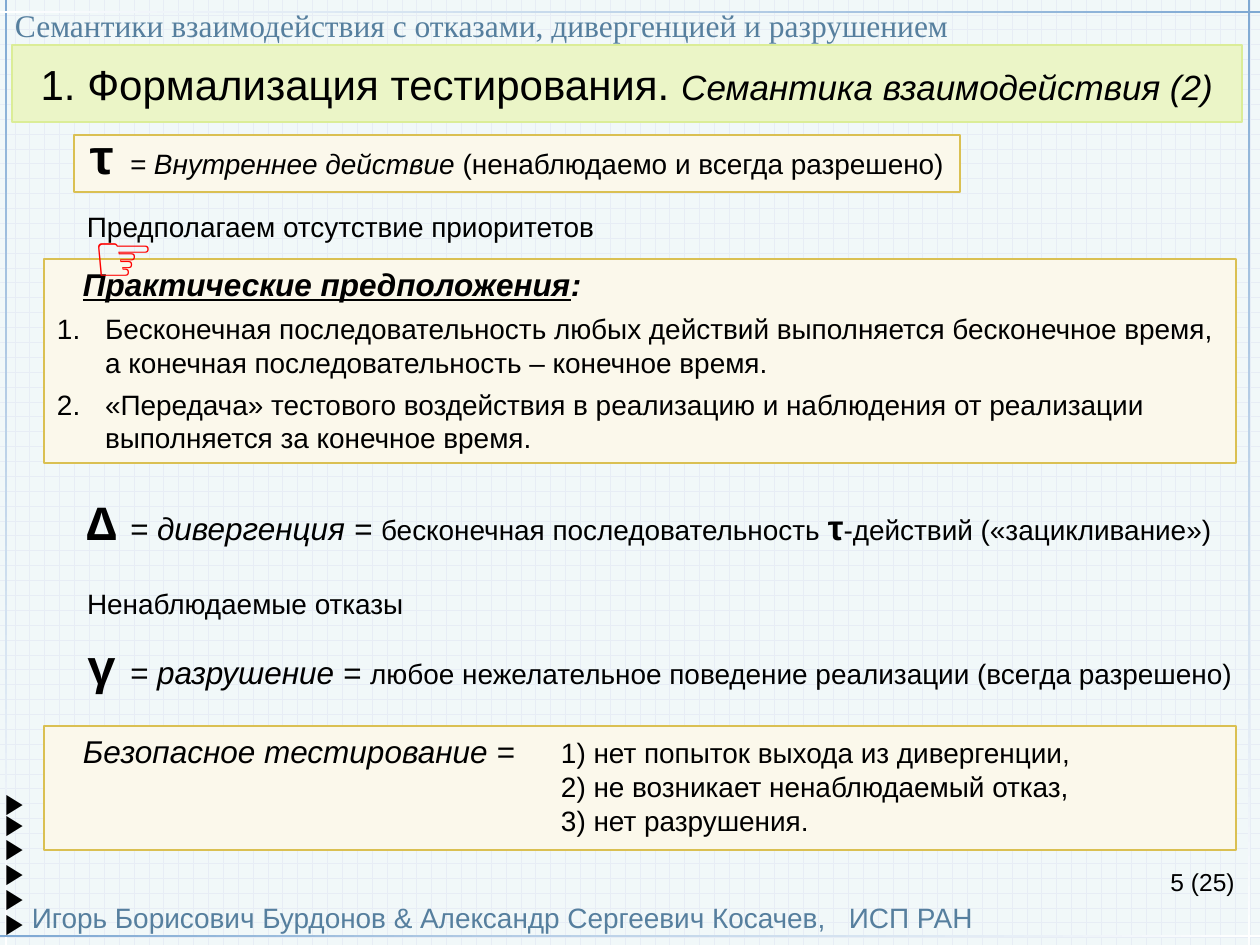
import pptx
import pptx.dml.color
import pptx.enum.dml
import pptx.enum.shapes
import pptx.enum.text
import pptx.oxml.ns
import pptx.util
from lxml import etree

SCALE = 914400 / 126
ALIGN = pptx.enum.text.PP_ALIGN
ANCHOR = pptx.enum.text.MSO_ANCHOR
AUTO_SIZE = pptx.enum.text.MSO_AUTO_SIZE

BLACK = "000000"
STEEL = "567F9E"
LINE_BLUE = "7FA9D3"
WHITE = "FFFFFF"
CREAM = "FBF8EB"
GOLD = "DAC052"

BODY = {"name": "Arial", "size": 16}
BODY_ITALIC = {**BODY, "italic": True}
TERM = {"name": "Arial", "size": 18, "italic": True}
HEADING = {**TERM, "bold": True}
SYMBOL = {"name": "Courier New", "size": 28, "bold": True}
SYMBOL_GAP = {**SYMBOL, "name": "Arial"}
MARKER = {"name": "Times New Roman", "size": 16, "bold": True}
PAGE = {"name": "Arial", "size": 14}


def px(value):
    return round(value * SCALE)


def rgb(value):
    return pptx.dml.color.RGBColor.from_string(value)


def set_values(target, values):
    for name, value in values.items():
        setattr(target, name, value)


def add_runs(paragraph, runs, color):
    for text, style in runs:
        for index, line in enumerate(text.split("\n")):
            if index:
                paragraph.add_line_break()
            run = paragraph.add_run()
            run.text = line
            set_values(run.font, {**style, "size": pptx.util.Pt(style["size"])})
            run.font.color.rgb = rgb(color)


def symbol_runs(symbol):
    return [(symbol, SYMBOL), (" ", SYMBOL_GAP)]


def set_indent(paragraph, margin, first_line):
    properties = paragraph._p.get_or_add_pPr()
    properties.set("marL", str(px(margin)))
    properties.set("indent", str(px(first_line)))


def set_number(paragraph):
    number = etree.SubElement(paragraph._p.get_or_add_pPr(), pptx.oxml.ns.qn("a:buAutoNum"))
    number.set("type", "arabicPeriod")


def set_tab(paragraph, position):
    tabs = etree.SubElement(paragraph._p.get_or_add_pPr(), pptx.oxml.ns.qn("a:tabLst"))
    tab = etree.SubElement(tabs, pptx.oxml.ns.qn("a:tab"))
    tab.set("pos", str(px(position)))
    tab.set("algn", "l")


def set_frame(shape, insets=(13, 6), **values):
    across, down = (px(inset) for inset in insets)
    set_values(shape.text_frame, {
        "margin_left": across, "margin_right": across,
        "margin_top": down, "margin_bottom": down, **values})
    return shape.text_frame.paragraphs[0]


def add_label(slide, box, runs, color=BLACK, align=ALIGN.LEFT, wrap=False, **frame):
    shape = slide.shapes.add_textbox(*map(px, box))
    paragraph = set_frame(shape, word_wrap=wrap, **frame)
    paragraph.alignment = align
    add_runs(paragraph, runs, color)
    return paragraph


def add_rectangle(slide, box):
    shape = slide.shapes.add_shape(pptx.enum.shapes.MSO_SHAPE.RECTANGLE, *map(px, box))
    shape.shadow.inherit = False
    return shape


def add_panel(slide, box, fill=CREAM, line=GOLD, align=ALIGN.LEFT, **frame):
    shape = add_rectangle(slide, box)
    shape.fill.solid()
    shape.fill.fore_color.rgb = rgb(fill)
    shape.line.color.rgb = rgb(line)
    shape.line.width = pptx.util.Pt(0.75)
    paragraph = set_frame(shape, **{"word_wrap": True, "vertical_anchor": ANCHOR.TOP, **frame})
    paragraph.alignment = align
    return shape.text_frame


def add_border(slide, box, colors, angle):
    shape = add_rectangle(slide, box)
    shape.line.fill.background()
    shape.fill.gradient()
    shape.fill.gradient_angle = angle
    for stop, color, position in zip(shape.fill.gradient_stops, colors, (0, 1)):
        stop.color.rgb = rgb(color)
        stop.position = position


def add_background(slide):
    fill = slide.background.fill
    fill.patterned()
    fill.pattern = pptx.enum.dml.MSO_PATTERN.HORIZONTAL_BRICK
    fill.fore_color.rgb = rgb("E7EDF5")
    fill.back_color.rgb = rgb("F1F8F9")
    fade = (LINE_BLUE, WHITE)
    for left in (5, 1248):
        add_border(slide, (left, 0, 2, 945), fade, 270)
    add_border(slide, (0, 11, 1260, 2), fade[::-1], 0)
    add_border(slide, (0, 935, 1260, 2), fade, 0)


def add_header_and_footer(slide):
    add_label(slide, (15, 6, 1226, 38),
              [("Семантики взаимодействия с отказами, дивергенцией и разрушением",
                {"name": "Times New Roman", "size": 18})],
              color=STEEL, wrap=True, insets=(0, 0))
    footer = add_label(
        slide, (32, 900, 945, 34),
        [("Игорь Борисович Бурдонов & Александр Сергеевич Косачев,\tИСП РАН", BODY)],
        color=STEEL, wrap=True, insets=(0, 0), vertical_anchor=ANCHOR.BOTTOM)
    set_tab(footer, 817)
    add_label(slide, (903, 861, 294, 66), [("5", PAGE)], align=ALIGN.RIGHT, wrap=True)
    add_label(slide, (1191, 867, 44, 30), [("(25)", PAGE)], insets=(0, 0))
    for top in (786, 807, 831, 856, 881, 906):
        add_label(slide, (5, top, 15, 34), [("▶", MARKER)], insets=(0, 0))


def add_title(slide):
    title = add_panel(slide, (12, 45, 1230, 77), "EBF5C7", "DBED97", ALIGN.CENTER,
                      insets=(0, 13), vertical_anchor=ANCHOR.MIDDLE)
    add_runs(title.paragraphs[0], [
        ("1. Формализация тестирования. ", {"name": "Arial", "size": 24}),
        ("Семантика взаимодействия (2)", {"name": "Arial", "size": 20, "italic": True})], BLACK)


def add_assumptions(slide):
    frame = add_panel(slide, (44, 259, 1192, 204))
    heading = frame.paragraphs[0]
    set_indent(heading, 26, 0)
    add_runs(heading, [("Практические предположения", {**HEADING, "underline": True}),
                       (":", HEADING)], BLACK)
    for text in (
            "Бесконечная последовательность любых действий выполняется бесконечное время,\n"
            "а конечная последовательность – конечное время.",
            "«Передача» тестового воздействия в реализацию и наблюдения от реализации\n"
            "выполняется за конечное время."):
        paragraph = frame.add_paragraph()
        paragraph.alignment = ALIGN.LEFT
        paragraph.space_before = pptx.util.Pt(5)
        set_indent(paragraph, 48, -48)
        set_number(paragraph)
        add_runs(paragraph, [(text, BODY)], BLACK)


def add_definitions(slide):
    tau = add_panel(slide, (74, 135, 886, 57), word_wrap=False).paragraphs[0]
    tau.line_spacing = pptx.util.Pt(25)
    add_runs(tau, symbol_runs("τ") + [
        ("= Внутреннее действие", BODY_ITALIC),
        (" (ненаблюдаемо и всегда разрешено)", BODY)], BLACK)
    for box, runs in (
            ((74, 204, 539, 47), [("Предполагаем отсутствие приоритетов", BODY)]),
            ((74, 485, 1158, 72), symbol_runs("Δ") + [
                ("= дивергенция = ", TERM),
                ("бесконечная последовательность ", BODY),
                ("τ", {"name": "Arial", "size": 20, "bold": True}),
                ("-действий («зацикливание»)", BODY)]),
            ((74, 581, 345, 47), [("Ненаблюдаемые отказы", BODY)]),
            ((74, 629, 1172, 72), symbol_runs("γ") + [
                ("= разрушение = ", TERM),
                ("любое нежелательное поведение реализации (всегда разрешено)", BODY)])):
        add_label(slide, box, runs, auto_size=AUTO_SIZE.SHAPE_TO_FIT_TEXT)


def add_safe_testing(slide):
    paragraph = add_panel(slide, (44, 726, 1192, 124)).paragraphs[0]
    set_indent(paragraph, 504, -478)
    add_runs(paragraph, [
        ("Безопасное тестирование =\t", TERM),
        ("1) нет попыток выхода из дивергенции,\n"
         "2) не возникает ненаблюдаемый отказ,\n"
         "3) нет разрушения.", BODY)], BLACK)


def main():
    presentation = pptx.Presentation()
    set_values(presentation, {"slide_width": px(1260), "slide_height": px(945)})
    slide = presentation.slides.add_slide(presentation.slide_layouts[6])
    add_background(slide)
    add_header_and_footer(slide)
    add_title(slide)
    add_definitions(slide)
    add_assumptions(slide)
    add_safe_testing(slide)
    add_label(slide, (79, 208, 84, 97), [("☞", {"name": "Arial", "size": 40, "bold": True})],
              color="FF0000", wrap=True)
    presentation.save("out.pptx")


if __name__ == "__main__":
    main()
